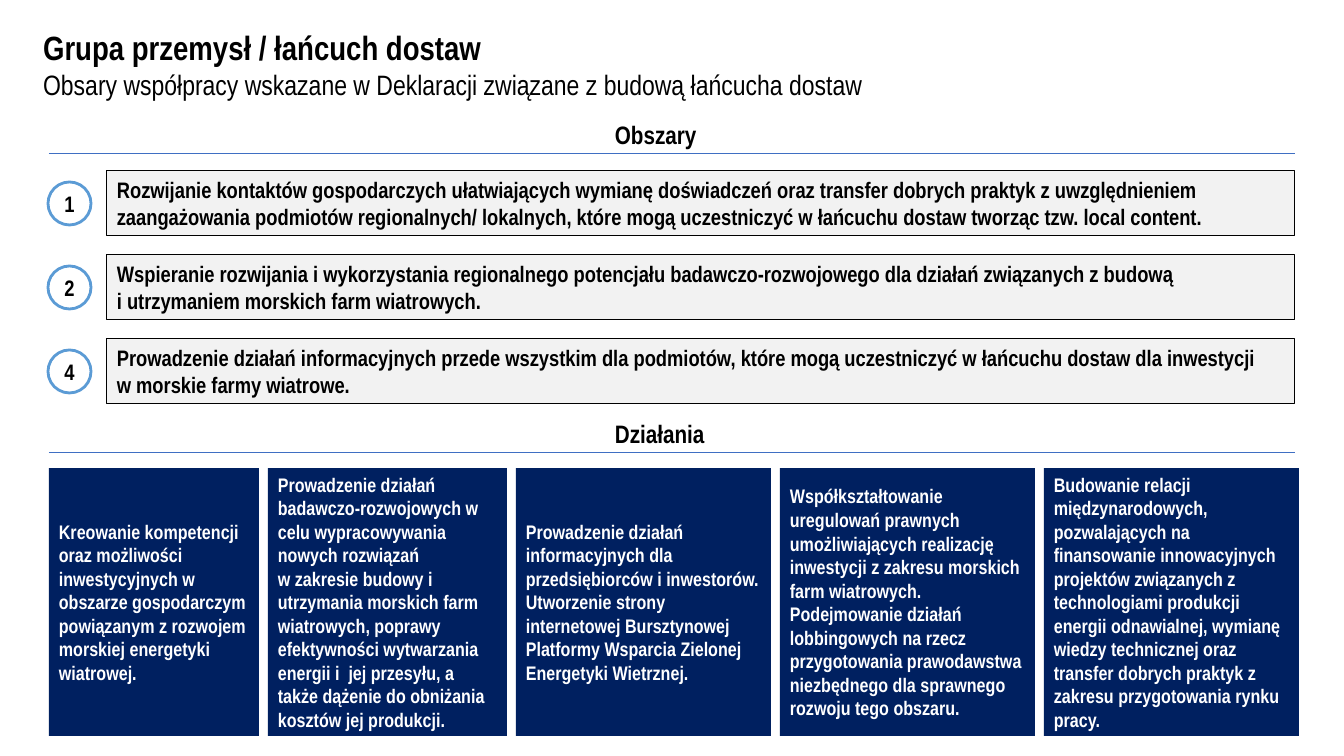
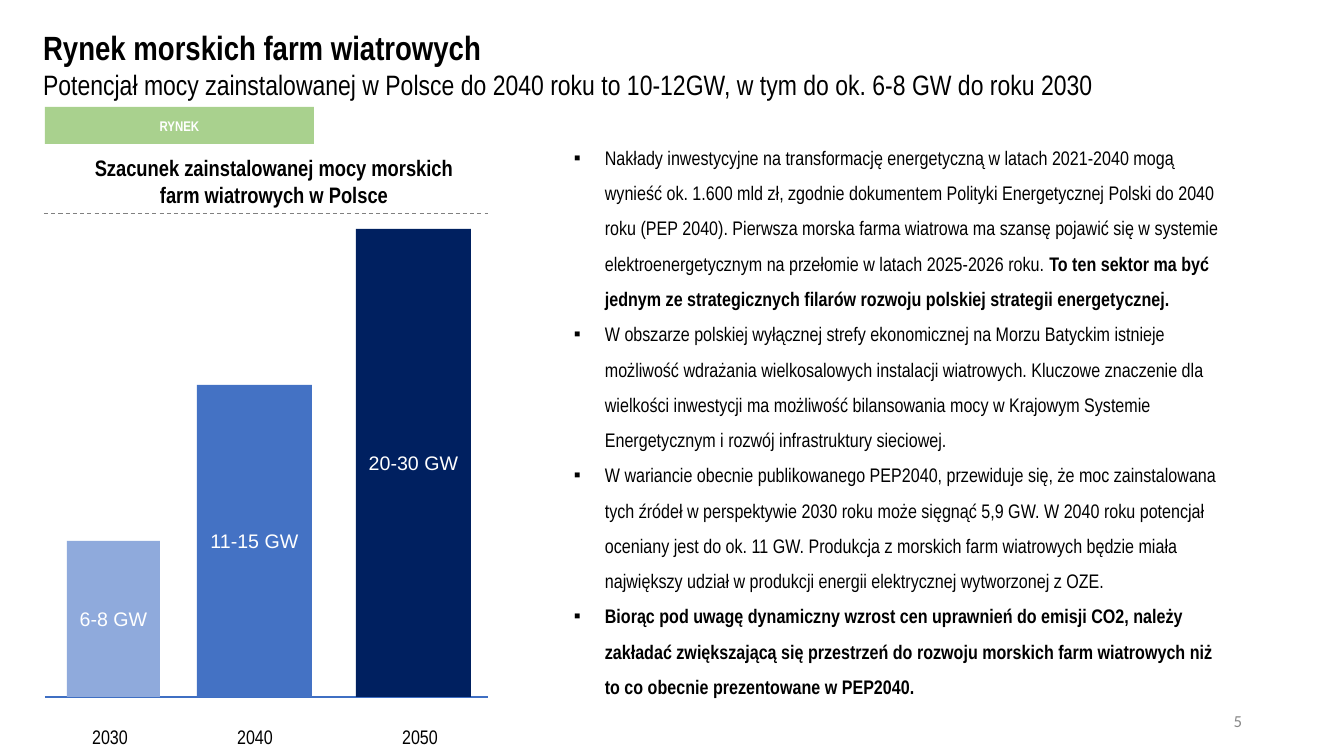
"""Build two slides on the offshore wind supply chain and market."""
import dataclasses

import lxml.etree
import pptx
import pptx.dml.color
import pptx.enum.dml
import pptx.enum.shapes
import pptx.enum.text
import pptx.oxml.ns
import pptx.util

PX = 914400 / 100.8
SHAPES = pptx.enum.shapes.MSO_SHAPE
ALIGN = pptx.enum.text.PP_ALIGN
ANCHOR = pptx.enum.text.MSO_ANCHOR


@dataclasses.dataclass(frozen=True)
class Theme:
    font: str = "Arial Narrow"
    chart_font: str = "Arial"
    number_font: str = "Calibri"
    black: str = "000000"
    white: str = "FFFFFF"
    grey: str = "888888"
    dash_grey: str = "808080"
    panel: str = "F2F2F2"
    navy: str = "002060"
    blue: str = "4472C4"
    light_blue: str = "8FAADC"
    ring: str = "5B9BD5"
    rule: str = "3F6FC3"
    green: str = "A9D18E"
    title_size: int = 24
    subtitle_size: int = 20
    heading_size: int = 18
    area_size: int = 16
    body_size: int = 14
    number_size: int = 12
    tag_size: int = 10


theme = Theme()
color = pptx.dml.color.RGBColor.from_string


def add_box(slide, box, text, size, ink=theme.black, bold=False, align=ALIGN.LEFT,
            anchor=ANCHOR.MIDDLE, fill=None, outline=None, kind=SHAPES.RECTANGLE,
            font=theme.font):
    place = [round(length * PX) for length in box]
    if fill is None:
        shape = slide.shapes.add_textbox(*place)
    else:
        shape = slide.shapes.add_shape(kind, *place)
        shape.shadow.inherit = False
        shape.fill.solid()
        shape.fill.fore_color.rgb = color(fill)
        if outline:
            shape.line.color.rgb = color(outline[0])
            shape.line.width = pptx.util.Pt(outline[1])
        else:
            shape.line.fill.background()
    frame = shape.text_frame
    frame.word_wrap = True
    frame.vertical_anchor = anchor
    frame.text = text
    for paragraph in frame.paragraphs:
        paragraph.alignment = align
        paragraph.font.name = font
        paragraph.font.size = pptx.util.Pt(size)
        paragraph.font.bold = bold
        paragraph.font.color.rgb = color(ink)
    return shape


def add_rule(slide, left, right, top, ink=theme.rule, dash=None):
    line = slide.shapes.add_connector(
        pptx.enum.shapes.MSO_CONNECTOR.STRAIGHT,
        *[round(length * PX) for length in (left, top, right, top)])
    line.line.color.rgb = color(ink)
    line.line.width = pptx.util.Pt(0.75)
    line.line.dash_style = dash
    lxml.etree.SubElement(line._element.spPr, pptx.oxml.ns.qn("a:effectLst"))


presentation = pptx.Presentation()
presentation.slide_width = round(1344 * PX)
presentation.slide_height = round(756 * PX)

titles = [
    ("Grupa przemysł / łańcuch dostaw",
     "Obsary współpracy wskazane w Deklaracji związane z budową łańcucha dostaw"),
    ("Rynek morskich farm wiatrowych",
     "Potencjał mocy zainstalowanej w Polsce do 2040 roku to 10-12GW, "
     "w tym do ok. 6-8 GW do roku 2030"),
]
slides = []
for lines in titles:
    slide = presentation.slides.add_slide(presentation.slide_layouts[5])
    title = slide.shapes.title
    title.left, title.top, title.width, title.height = [
        round(length * PX) for length in (33, 22, 1244, 85)]
    frame = title.text_frame
    frame.text = "\n".join(lines)
    frame.word_wrap = True
    frame.auto_size = pptx.enum.text.MSO_AUTO_SIZE.NONE
    frame.vertical_anchor = ANCHOR.TOP
    sizes = (theme.title_size, theme.subtitle_size)
    for paragraph, size in zip(frame.paragraphs, sizes):
        paragraph.alignment = ALIGN.LEFT
        paragraph.font.name = theme.font
        paragraph.font.size = pptx.util.Pt(size)
        paragraph.font.bold = size == theme.title_size
        paragraph.font.color.rgb = color(theme.black)
    slides.append(slide)
areas_slide, market_slide = slides

for heading, top in (("Obszary", 114), ("Działania", 413)):
    add_box(areas_slide, (605, top, 116, 40), heading, theme.heading_size,
            bold=True, anchor=ANCHOR.TOP)
    add_rule(areas_slide, 49, 1295, top + 40)

areas = [
    ("1", "Rozwijanie kontaktów gospodarczych ułatwiających wymianę doświadczeń oraz "
          "transfer dobrych praktyk z uwzględnieniem zaangażowania podmiotów "
          "regionalnych/ lokalnych, które mogą uczestniczyć w łańcuchu dostaw "
          "tworząc tzw. local content."),
    ("2", "Wspieranie rozwijania i wykorzystania regionalnego potencjału "
          "badawczo-rozwojowego dla działań związanych z budową\v"
          "i utrzymaniem morskich farm wiatrowych."),
    ("4", "Prowadzenie działań informacyjnych przede wszystkim dla podmiotów, które "
          "mogą uczestniczyć w łańcuchu dostaw dla inwestycji\v"
          "w morskie farmy wiatrowe."),
]
for row, (number, text) in enumerate(areas):
    top = 171 + 84 * row
    add_box(areas_slide, (48, top + 11, 43, 43), number, theme.area_size, bold=True,
            align=ALIGN.CENTER, fill=theme.white, outline=(theme.ring, 2),
            kind=SHAPES.OVAL)
    add_box(areas_slide, (107, top, 1188, 65), text, theme.area_size, bold=True,
            fill=theme.panel, outline=(theme.black, 0.75))

actions = [
    (210, "Kreowanie kompetencji oraz możliwości inwestycyjnych w obszarze "
          "gospodarczym powiązanym z rozwojem morskiej energetyki wiatrowej."),
    (239, "Prowadzenie działań badawczo-rozwojowych w celu wypracowywania nowych "
          "rozwiązań\nw zakresie budowy i utrzymania morskich farm wiatrowych, poprawy "
          "efektywności wytwarzania energii i  jej przesyłu, a także dążenie do "
          "obniżania kosztów jej produkcji."),
    (255, "Prowadzenie działań informacyjnych dla przedsiębiorców i inwestorów. "
          "Utworzenie strony internetowej Bursztynowej Platformy Wsparcia Zielonej "
          "Energetyki Wietrznej."),
    (255, "Współkształtowanie uregulowań prawnych umożliwiających realizację "
          "inwestycji z zakresu morskich farm wiatrowych. Podejmowanie działań "
          "lobbingowych na rzecz przygotowania prawodawstwa niezbędnego dla sprawnego "
          "rozwoju tego obszaru."),
    (255, "Budowanie relacji międzynarodowych, pozwalających na finansowanie "
          "innowacyjnych projektów związanych z technologiami produkcji energii "
          "odnawialnej, wymianę wiedzy technicznej oraz transfer dobrych praktyk z "
          "zakresu przygotowania rynku pracy."),
]
left = 49
for width, text in actions:
    add_box(areas_slide, (left, 468, width, 268), text, theme.body_size,
            ink=theme.white, bold=True, fill=theme.navy)
    left += width + 9

add_box(market_slide, (45, 107, 269, 37), "RYNEK", theme.tag_size, ink=theme.white,
        bold=True, align=ALIGN.CENTER, fill=theme.green)
add_box(market_slide, (76, 149, 396, 65),
        "Szacunek zainstalowanej mocy morskich farm wiatrowych w Polsce",
        theme.area_size, bold=True, align=ALIGN.CENTER, anchor=ANCHOR.TOP)
add_rule(market_slide, 44, 488, 214, theme.dash_grey,
         pptx.enum.dml.MSO_LINE.DASH)

baseline = 697
add_rule(market_slide, 45, 488, baseline)
bars = [
    ("2030", "6-8 GW", 67, 93, 76, theme.light_blue),
    ("2040", "11-15 GW", 197, 115, 221, theme.blue),
    ("2050", "20-30 GW", 356, 115, 386, theme.navy),
]
for step, (year, capacity, left, width, label_left, fill) in enumerate(bars, 1):
    height = 156 * step
    add_box(market_slide, (left, baseline - height, width, height), capacity,
            theme.body_size, ink=theme.white, align=ALIGN.CENTER, fill=fill,
            font=theme.chart_font)
    add_box(market_slide, (label_left, 720, 68, 34), year, theme.body_size,
            align=ALIGN.CENTER, anchor=ANCHOR.TOP)

findings = [
    ("Nakłady inwestycyjne na transformację energetyczną w latach 2021-2040 mogą "
     "wynieść ok. 1.600 mld zł, zgodnie dokumentem Polityki Energetycznej Polski do "
     "2040 roku (PEP 2040). Pierwsza morska farma wiatrowa ma szansę pojawić się w "
     "systemie elektroenergetycznym na przełomie w latach 2025-2026 roku. ",
     "To ten sektor ma być jednym ze strategicznych filarów rozwoju polskiej "
     "strategii energetycznej."),
    ("W obszarze polskiej wyłącznej strefy ekonomicznej na Morzu Batyckim istnieje "
     "możliwość wdrażania wielkosalowych instalacji wiatrowych. Kluczowe znaczenie "
     "dla wielkości inwestycji ma możliwość bilansowania mocy w Krajowym Systemie "
     "Energetycznym i rozwój infrastruktury sieciowej.", ""),
    ("W wariancie obecnie publikowanego PEP2040, przewiduje się, że moc zainstalowana "
     "tych źródeł w perspektywie 2030 roku może sięgnąć 5,9 GW. W 2040 roku potencjał "
     "oceniany jest do ok. 11 GW. Produkcja z morskich farm wiatrowych będzie miała "
     "największy udział w produkcji energii elektrycznej wytworzonej z OZE.", ""),
    ("", "Biorąc pod uwagę dynamiczny wzrost cen uprawnień do emisji CO2, należy "
         "zakładać zwiększającą się przestrzeń do rozwoju morskich farm wiatrowych niż "
         "to co obecnie prezentowane w PEP2040."),
]
findings_box = add_box(market_slide, (564, 129, 674, 607),
                       "\n".join(plain for plain, strong in findings),
                       theme.body_size, anchor=ANCHOR.TOP)
for paragraph, (plain, strong) in zip(findings_box.text_frame.paragraphs, findings):
    paragraph.line_spacing = 1.5
    if strong:
        run = paragraph.add_run()
        run.text = strong
        run.font.bold = True
    properties = paragraph._p.get_or_add_pPr()
    properties.set("marL", str(round(31 * PX)))
    properties.set("indent", str(round(-33 * PX)))
    defaults = properties.find(pptx.oxml.ns.qn("a:defRPr"))
    for tag, name, value in (("a:buFont", "typeface", theme.chart_font),
                             ("a:buChar", "char", "▪")):
        bullet = lxml.etree.Element(pptx.oxml.ns.qn(tag), {name: value})
        defaults.addprevious(bullet)

add_box(market_slide, (950, 701, 302, 40), "5", theme.number_size, ink=theme.grey,
        align=ALIGN.RIGHT, font=theme.number_font)

presentation.save("out.pptx")
